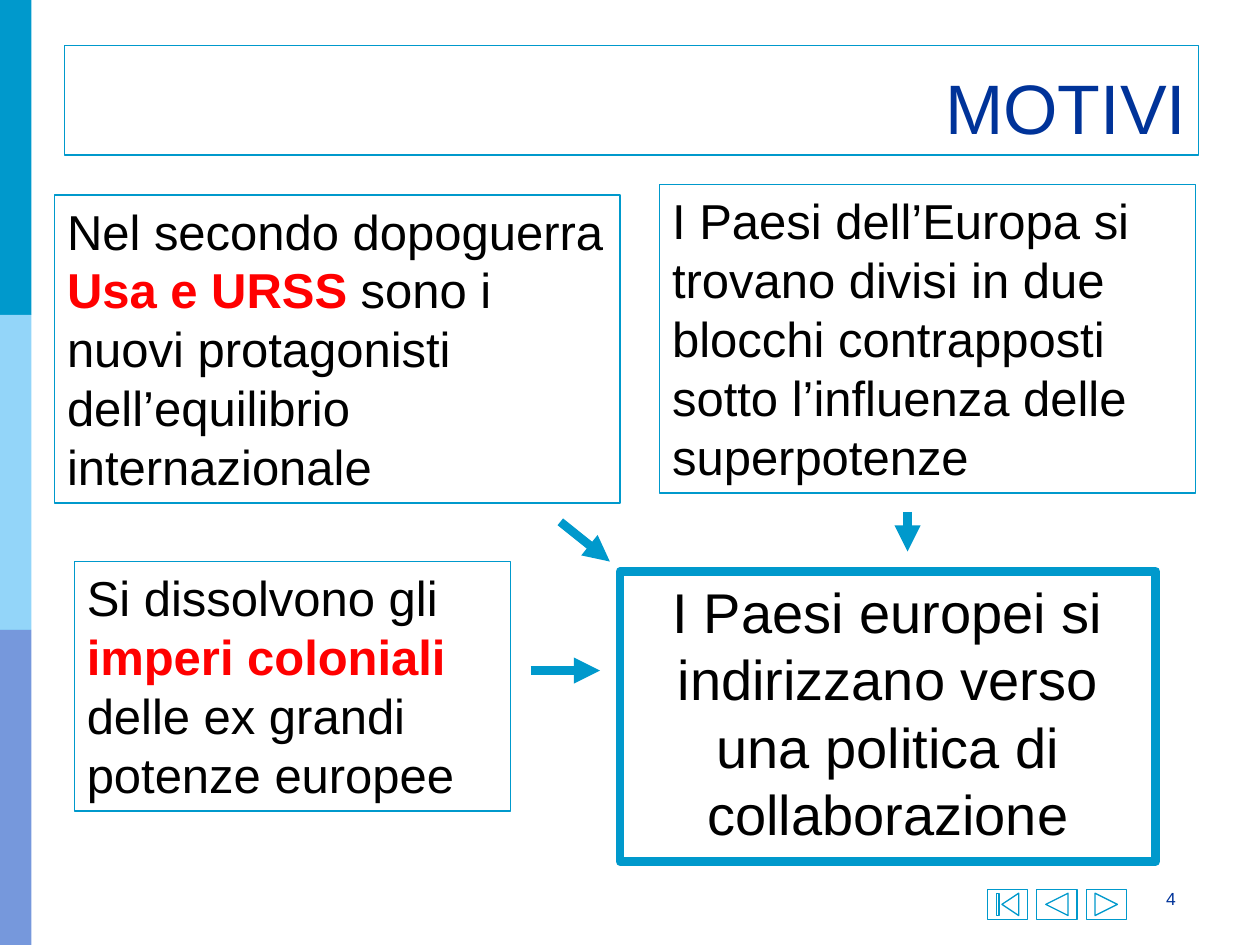
from lxml.etree import SubElement
from pptx import Presentation
from pptx.dml.color import RGBColor
from pptx.enum.shapes import MSO_CONNECTOR, MSO_SHAPE
from pptx.enum.text import MSO_ANCHOR, PP_ALIGN
from pptx.oxml.ns import qn
from pptx.util import Pt

ACCENT, NAVY, BLACK, RED = "0099CC", "003399", "000000", "FF0000"


def color(hex_code):
    return RGBColor.from_string(hex_code)


def write(shape, *parts, size=28, ink=BLACK, align=PP_ALIGN.LEFT, anchor=MSO_ANCHOR.TOP):
    """Write the parts as one paragraph; parts wrapped in a tuple are bold red."""
    frame = shape.text_frame
    frame.word_wrap = True
    frame.vertical_anchor = anchor
    paragraph = frame.paragraphs[0]
    paragraph.alignment = align
    for part in parts:
        stressed = isinstance(part, tuple)
        run = paragraph.add_run()
        run.text = part[0] if stressed else part
        run.font.name = "Arial"
        run.font.size = Pt(size)
        run.font.bold = stressed
        run.font.color.rgb = color(RED if stressed else ink)


class SlideBuilder:
    def __init__(self, slide):
        self.shapes = slide.shapes

    def box(self, left, top, width, height, fill=None, alpha=None, border=None,
            preset=MSO_SHAPE.RECTANGLE):
        shape = self.shapes.add_shape(preset, Pt(left), Pt(top), Pt(width), Pt(height))
        shape.shadow.inherit = False
        if fill:
            shape.fill.solid()
            shape.fill.fore_color.rgb = color(fill)
        else:
            shape.fill.background()
        if alpha:
            tint = shape.fill._xPr.find(qn("a:solidFill"))[0]
            SubElement(tint, qn("a:alpha"), val=str(alpha * 1000))
        if border:
            shape.line.width = Pt(border)
            shape.line.color.rgb = color(ACCENT)
        else:
            shape.line.fill.background()
        return shape

    def label(self, left, top, width, height, *parts, **text_format):
        text_box = self.shapes.add_textbox(Pt(left), Pt(top), Pt(width), Pt(height))
        write(text_box, *parts, **text_format)

    def arrow(self, x1, y1, x2, y2):
        connector = self.shapes.add_connector(
            MSO_CONNECTOR.STRAIGHT, Pt(x1), Pt(y1), Pt(x2), Pt(y2))
        connector.line.width = Pt(5)
        connector.line.color.rgb = color(ACCENT)
        SubElement(connector.line._get_or_add_ln(), qn("a:tailEnd"), type="triangle")
        SubElement(connector._element.spPr, qn("a:effectLst"))


def main():
    presentation = Presentation()
    presentation.slide_width, presentation.slide_height = Pt(720), Pt(540)
    builder = SlideBuilder(presentation.slides.add_slide(presentation.slide_layouts[6]))

    for row, (fill, alpha) in enumerate([(ACCENT, None), ("93D5F9", None), ("3366CC", 67)]):
        builder.box(0, row * 180, 18, 180, fill=fill, alpha=alpha)

    buttons = [MSO_SHAPE.ACTION_BUTTON_BEGINNING, MSO_SHAPE.ACTION_BUTTON_BACK_OR_PREVIOUS,
               MSO_SHAPE.ACTION_BUTTON_FORWARD_OR_NEXT]
    for column, preset in enumerate(buttons):
        builder.box(564.3 + column * 28.2, 508.3, 22.9, 17, border=0.75, preset=preset)
    builder.label(610, 504, 69, 36, "4", size=10, ink=NAVY, align=PP_ALIGN.RIGHT)

    title = builder.box(36.9, 26.2, 648, 62.4, border=0.75)
    write(title, "MOTIVI", size=40, ink=NAVY, align=PP_ALIGN.RIGHT, anchor=MSO_ANCHOR.BOTTOM)

    superpowers = builder.box(31.2, 111.4, 323.3, 176.2, border=1)
    write(superpowers, "Nel secondo dopoguerra ", ("Usa e URSS ",),
          "sono i nuovi protagonisti dell’equilibrio internazionale")
    blocs = builder.box(377, 105.6, 306.2, 176.2, border=0.75)
    write(blocs, "I Paesi dell’Europa si trovano divisi in due blocchi contrapposti "
                 "sotto l’influenza delle superpotenze")
    colonies = builder.box(42.5, 320.9, 249.2, 142.6, border=0.75)
    write(colonies, "Si dissolvono gli ", ("imperi coloniali ",),
          "delle ex grandi potenze europee")

    builder.arrow(320.2, 298.2, 348.5, 320.9)
    builder.arrow(303.2, 383.2, 342.9, 383.2)
    builder.arrow(518.6, 292.5, 518.6, 315.2)

    outcome = builder.box(354.3, 326.6, 306.2, 165.6, border=5)
    write(outcome, "I Paesi europei si indirizzano verso una politica di collaborazione",
          size=32, align=PP_ALIGN.CENTER)

    presentation.save("out.pptx")


if __name__ == "__main__":
    main()
